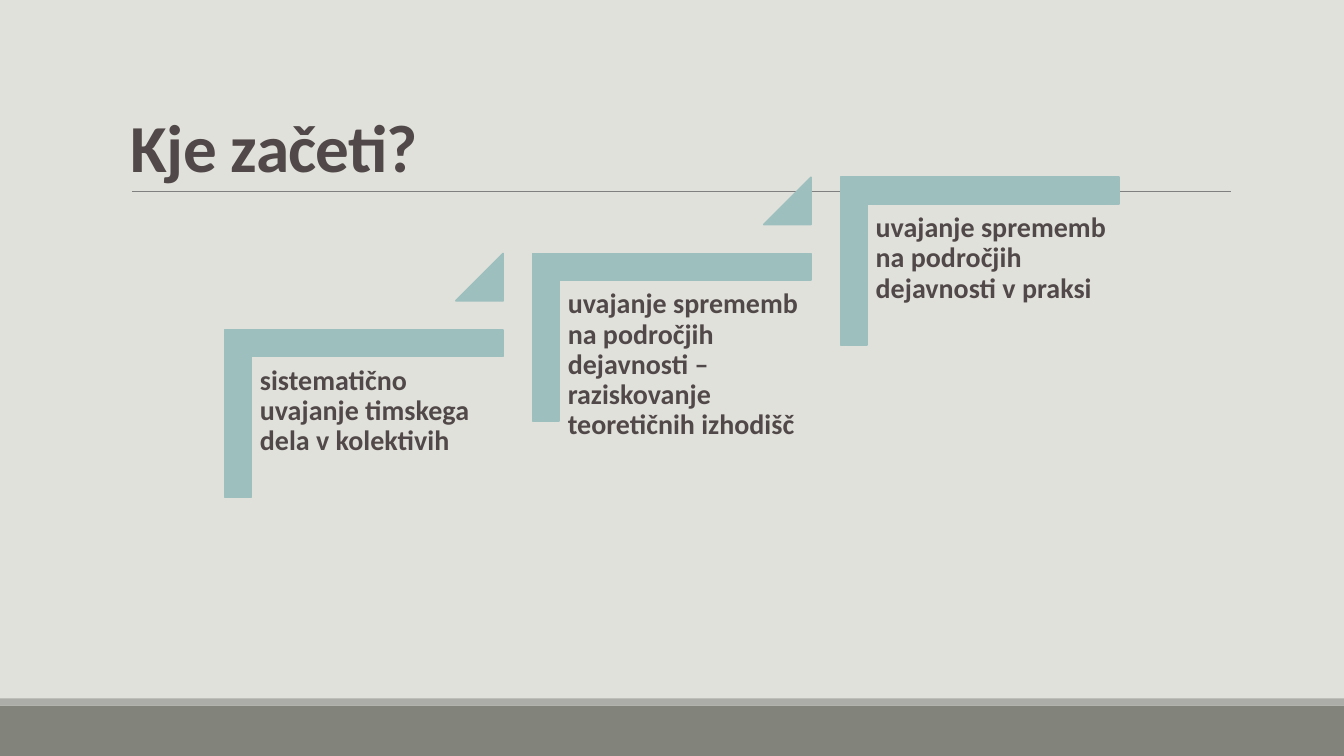
from pptx import Presentation
from pptx import util as u
from pptx.dml import color
from pptx.enum import shapes, text
from pptx.oxml import ns
from lxml import etree

INK, TEAL = "514949", "9DBFBE"
STEPS = [
    "sistematično uvajanje timskega dela v kolektivih",
    "uvajanje sprememb na področjih dejavnosti – raziskovanje teoretičnih izhodišč",
    "uvajanje sprememb na področjih dejavnosti v praksi",
]


def paint(target, hex_code):
    if hasattr(target, "solid"):
        target.solid()
        target = target.fore_color
    target.rgb = color.RGBColor.from_string(hex_code)


def add_figure(page, kind, left, top, width, height, fill, outline=None):
    figure = page.shapes.add_shape(kind, u.Cm(left), u.Cm(top), u.Cm(width), u.Cm(height))
    figure.shadow.inherit = False
    paint(figure.fill, fill)
    if outline:
        paint(figure.line.fill, fill)
        figure.line.width = u.Pt(outline)
    else:
        figure.line.fill.background()
    return figure


def make_corner(figure, thickness):
    geometry = figure._element.spPr.find(ns.qn("a:prstGeom"))
    geometry.set("prst", "corner")
    guides = geometry.find(ns.qn("a:avLst"))
    for name in ("adj1", "adj2"):
        etree.SubElement(guides, ns.qn("a:gd"), name=name,
                         fmla=f"val {round(thickness * 100000)}")


def add_text(page, words, left, top, width, height, size, spacing,
             anchor=text.MSO_ANCHOR.TOP, inset=None, tracking=None):
    box = page.shapes.add_textbox(u.Cm(left), u.Cm(top), u.Cm(width), u.Cm(height))
    frame = box.text_frame
    frame.word_wrap = True
    frame.vertical_anchor = anchor
    if inset is not None:
        frame.margin_left = frame.margin_right = u.Cm(inset)
        frame.margin_top = frame.margin_bottom = u.Cm(inset)
    para = frame.paragraphs[0]
    para.line_spacing = spacing
    span = para.add_run()
    span.text = words
    span.font.name = "Calibri"
    span.font.size = u.Pt(size)
    span.font.bold = True
    paint(span.font.fill, INK)
    if tracking is not None:
        span.font._element.set("spc", str(round(tracking * 100)))


def add_footer(page, top, width, height, stripe):
    rectangle = shapes.MSO_SHAPE.RECTANGLE
    add_figure(page, rectangle, 0, top + stripe, width, height - stripe, "82847C")
    add_figure(page, rectangle, 0, top, width, stripe, "ACADA8")


def add_title(page, words, left, top, width, height):
    bottom = top + height
    rule = page.shapes.add_connector(
        shapes.MSO_CONNECTOR.STRAIGHT,
        u.Cm(left + 0.28), u.Cm(bottom), u.Cm(left + width + 0.02), u.Cm(bottom))
    paint(rule.line.fill, "808080")
    rule.line.width = u.Pt(0.5)
    etree.SubElement(rule._element.spPr, ns.qn("a:effectLst"))
    add_text(page, words, left, top, width, height, 48, 0.85,
             anchor=text.MSO_ANCHOR.BOTTOM, tracking=-0.5)


def add_step(page, words, left, top, width, height):
    shift = (width - height) / 2
    bracket = add_figure(page, shapes.MSO_SHAPE.RECTANGLE, left + shift, top - shift,
                         height, width, TEAL, outline=1.25)
    make_corner(bracket, 0.16)
    bracket.rotation = 90
    add_text(page, words, left + 0.69, top + 0.71, 6.35, 5.56, 20, 0.9, inset=0.2)


def add_staircase(page, left, bottom, width, height, run, rise, marker):
    for index, words in enumerate(STEPS):
        step_left = left + index * run
        step_top = bottom - height - index * rise
        add_step(page, words, step_left, step_top, width, height)
        if index < len(STEPS) - 1:
            triangle = add_figure(page, shapes.MSO_SHAPE.ISOSCELES_TRIANGLE,
                                  step_left + width - marker, step_top - rise,
                                  marker, marker, TEAL, outline=1.25)
            triangle.adjustments[0] = 1


def main():
    deck = Presentation()
    deck.slide_width, deck.slide_height = u.Cm(33.87), u.Cm(19.05)
    page = deck.slides.add_slide(deck.slide_layouts[6])
    paint(page.background.fill, "E1E1DB")
    add_footer(page, top=17.6, width=33.87, height=1.45, stripe=0.18)
    add_title(page, "Kje začeti?", left=3.05, top=0.79, width=27.94, height=4.03)
    add_staircase(page, left=5.66, bottom=12.53, width=7.02, height=4.22,
                  run=7.76, rise=1.92, marker=1.19)
    deck.save("out.pptx")


if __name__ == "__main__":
    main()
